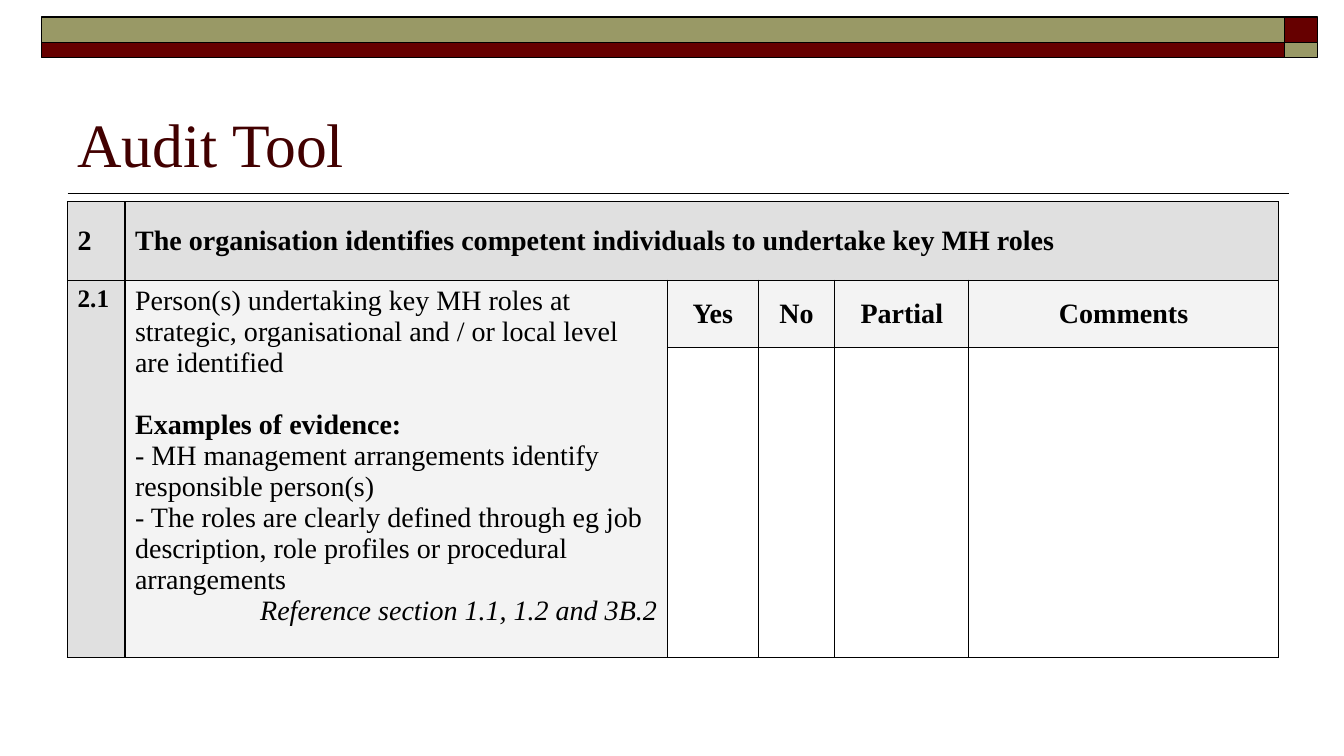
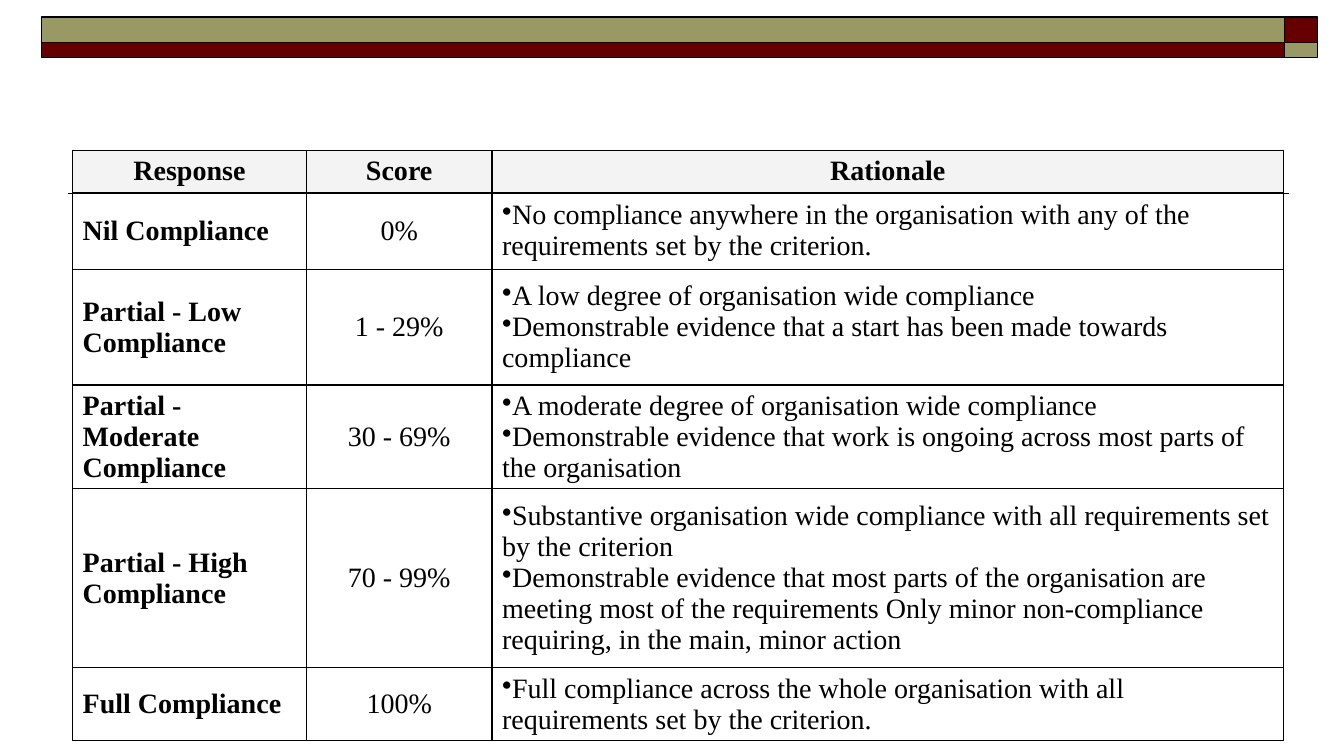
import pptx
import pptx.dml.color
import pptx.enum.shapes
import pptx.enum.text
import pptx.oxml
import pptx.oxml.ns
import pptx.util

Inches = pptx.util.Inches
ALIGN = pptx.enum.text.PP_ALIGN
ANCHOR = pptx.enum.text.MSO_ANCHOR

FONT = "Times New Roman"
BLACK = "000000"
MAROON = "660000"
OLIVE = "999966"
TITLE = "420000"
GREY = "E0E0E0"
PALE = "F3F3F3"

RESPONSES = [
    ("Nil Compliance", "0%", [
        "No compliance anywhere in the organisation with any of the requirements set by the criterion."]),
    ("Partial - Low Compliance", "1 - 29%", [
        "A low degree of organisation wide compliance",
        "Demonstrable evidence that a start has been made towards compliance"]),
    ("Partial - Moderate Compliance", "30 - 69%", [
        "A moderate degree of organisation wide compliance",
        "Demonstrable evidence that work is ongoing across most parts of the organisation"]),
    ("Partial - High Compliance", "70 - 99%", [
        "Substantive organisation wide compliance with all requirements set by the criterion",
        "Demonstrable evidence that most parts of the organisation are meeting most of the "
        "requirements Only minor non-compliance requiring, in the main, minor action"]),
    ("Full Compliance", "100%", [
        "Full compliance across the whole organisation with all requirements set by the criterion."]),
]


def rgb(value):
    """Turn a hex string into a colour."""
    return pptx.dml.color.RGBColor.from_string(value)


def write(frame, text, size=20, color=BLACK, bold=False, italic=False,
          align=ALIGN.LEFT, before=0, bullet=None):
    """Add one formatted paragraph, using the first one while it is empty."""
    para = frame.paragraphs[0]
    if para.runs:
        para = frame.add_paragraph()
    para.alignment = align
    para.space_before = pptx.util.Pt(before)
    if bullet:
        mark = pptx.oxml.parse_xml(
            f'<a:buChar {pptx.oxml.ns.nsdecls("a")} char="{bullet}"/>')
        para._p.get_or_add_pPr().append(mark)
    span = para.add_run()
    span.text = text
    span.font.name = FONT
    span.font.size = pptx.util.Pt(size)
    span.font.color.rgb = rgb(color)
    span.font.bold = bold
    span.font.italic = italic


def add_band(page, left, top, width, height, fill):
    """Draw one outlined rectangle of the header band."""
    band = page.shapes.add_shape(pptx.enum.shapes.MSO_SHAPE.RECTANGLE, Inches(left),
                                 Inches(top), Inches(width), Inches(height))
    band.shadow.inherit = False
    band.fill.solid()
    band.fill.fore_color.rgb = rgb(fill)
    band.line.color.rgb = rgb(BLACK)
    band.line.width = pptx.util.Pt(1)


def add_header(page, left=0.41, top=0.17, width=12.66):
    """Draw the two-row band and the rule under the title area."""
    corner = 0.33
    for offset, height, main, end in ((0, 0.25, OLIVE, MAROON), (0.25, 0.15, MAROON, OLIVE)):
        add_band(page, left, top + offset, width - corner, height, main)
        add_band(page, left + width - corner, top + offset, corner, height, end)
    rule = page.shapes.add_connector(pptx.enum.shapes.MSO_CONNECTOR.STRAIGHT,
                                     Inches(0.67), Inches(1.92), Inches(12.78), Inches(1.92))
    rule.line.color.rgb = rgb(BLACK)
    rule.line.width = pptx.util.Pt(1)
    rule._element.spPr.append(
        pptx.oxml.parse_xml(f'<a:effectLst {pptx.oxml.ns.nsdecls("a")}/>'))


def add_page(deck, title=None):
    """Add a blank page with the shared header and an optional title."""
    page = deck.slides.add_slide(deck.slide_layouts[6])
    add_header(page)
    if title:
        box = page.shapes.add_textbox(Inches(0.67), Inches(0.58), Inches(12), Inches(1.25))
        box.text_frame.word_wrap = True
        box.text_frame.vertical_anchor = ANCHOR.BOTTOM
        write(box.text_frame, title, size=44, color=TITLE)
    return page


def add_borders(cell):
    """Give a cell a thin black line on all four sides."""
    properties = cell._tc.get_or_add_tcPr()
    for side in "LRTB":
        properties.append(pptx.oxml.parse_xml(
            f'<a:ln{side} {pptx.oxml.ns.nsdecls("a")} w="12700"><a:solidFill>'
            f'<a:srgbClr val="{BLACK}"/></a:solidFill></a:ln{side}>'))


def add_grid(page, left, top, widths, heights):
    """Add an unfilled table with black borders and centred rows."""
    table = page.shapes.add_table(len(heights), len(widths), Inches(left), Inches(top),
                                  Inches(sum(widths)), Inches(sum(heights))).table
    table.first_row = False
    table.horz_banding = False
    for column, width in zip(table.columns, widths):
        column.width = Inches(width)
    for row, height in zip(table.rows, heights):
        row.height = Inches(height)
    for cell in table.iter_cells():
        add_borders(cell)
        cell.fill.background()
        cell.vertical_anchor = ANCHOR.MIDDLE
    return table


def shade(cell, color):
    """Fill a cell and return its text frame."""
    cell.fill.solid()
    cell.fill.fore_color.rgb = rgb(color)
    return cell.text_frame


def add_headings(table, row, first, labels):
    """Write pale, centred column headings along one row."""
    for column, label in enumerate(labels, first):
        write(shade(table.cell(row, column), PALE), label, bold=True, align=ALIGN.CENTER)


def build_audit(deck):
    """Build the audit tool page with its criterion form."""
    page = add_page(deck, "Audit Tool")
    table = add_grid(page, 0.67, 2, [0.57, 5.38, 0.9, 0.76, 1.33, 3.07], [0.78, 0.67, 2.82])
    table.cell(0, 1).merge(table.cell(0, 5))
    for column in (0, 1):
        table.cell(1, column).merge(table.cell(2, column))
        table.cell(1, column).vertical_anchor = ANCHOR.TOP
    write(shade(table.cell(0, 0), GREY), "2", bold=True)
    write(shade(table.cell(0, 1), GREY),
          "The organisation identifies competent individuals to undertake key MH roles", bold=True)
    write(shade(table.cell(1, 0), GREY), "2.1", size=18, bold=True)
    criterion = shade(table.cell(1, 1), PALE)
    write(criterion, "Person(s) undertaking key MH roles at strategic, organisational "
                     "and / or local level are identified")
    write(criterion, "Examples of evidence:", bold=True, before=22)
    write(criterion, "- MH management arrangements identify responsible person(s)")
    write(criterion, "- The roles are clearly defined through eg job description, "
                     "role profiles or procedural arrangements")
    write(criterion, "Reference section 1.1, 1.2 and 3B.2", italic=True, align=ALIGN.RIGHT)
    add_headings(table, 1, 2, ["Yes", "No", "Partial", "Comments"])


def build_scores(deck):
    """Build the page that explains each response and score."""
    page = add_page(deck)
    table = add_grid(page, 0.72, 1.49, [2.32, 1.84, 7.85], [0.42, 0.76, 1.15, 1.02, 1.78, 0.72])
    add_headings(table, 0, 0, ["Response", "Score", "Rationale"])
    for row, (response, score, reasons) in enumerate(RESPONSES, 1):
        write(table.cell(row, 0).text_frame, response, bold=True)
        write(table.cell(row, 1).text_frame, score, align=ALIGN.CENTER)
        for reason in reasons:
            write(table.cell(row, 2).text_frame, reason, bullet="•")


def main():
    """Build and save the deck."""
    deck = pptx.Presentation()
    deck.slide_width = Inches(13.33)
    deck.slide_height = Inches(7.5)
    build_audit(deck)
    build_scores(deck)
    deck.save("out.pptx")


if __name__ == "__main__":
    main()
